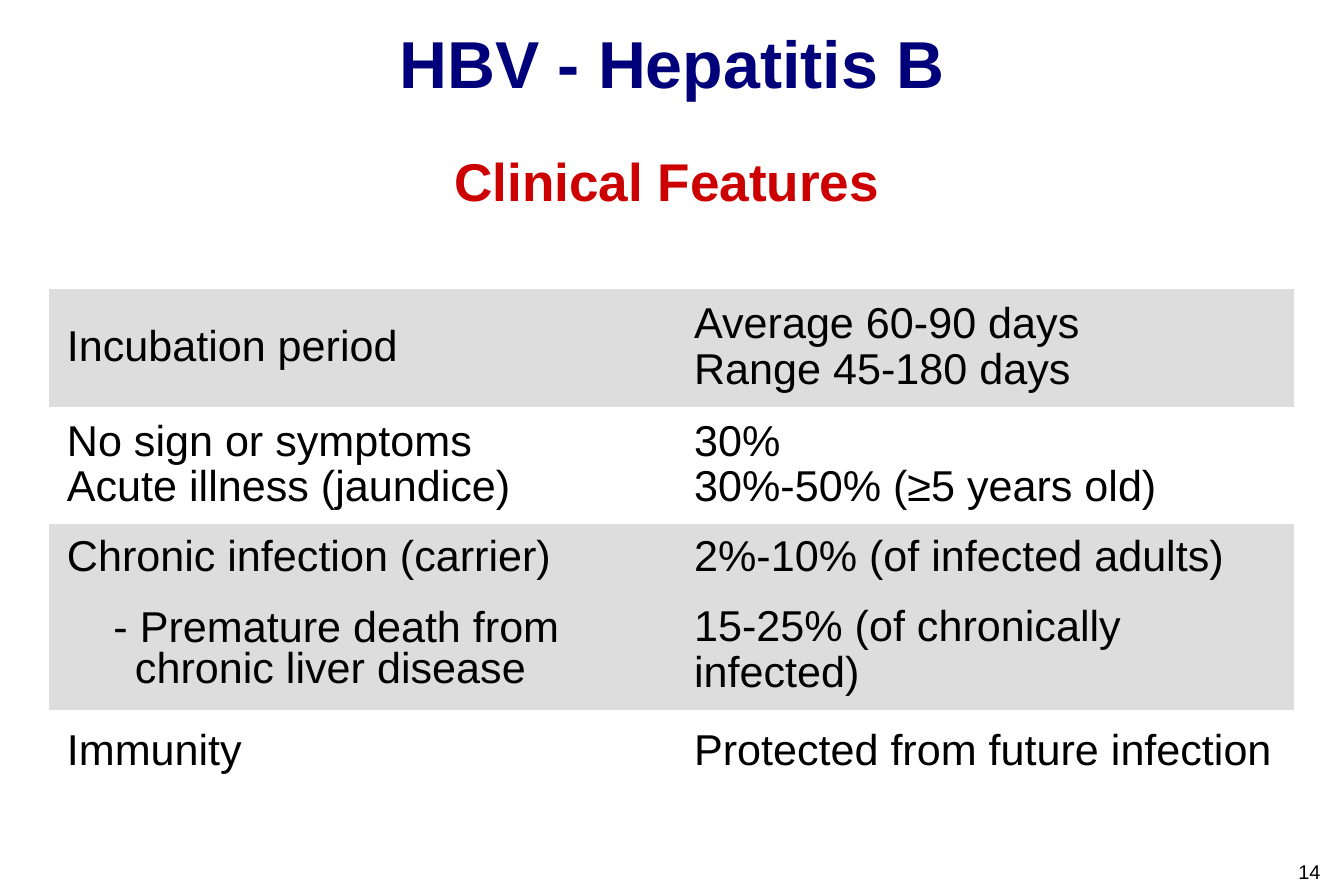
from pptx import Presentation
from pptx.enum.text import MSO_ANCHOR, PP_ALIGN
from pptx.dml.color import RGBColor
from pptx.oxml.ns import qn
from pptx.util import Inches, Pt

CENTER, LEFT = PP_ALIGN.CENTER, PP_ALIGN.LEFT
MIDDLE = MSO_ANCHOR.MIDDLE
TITLE_ONLY = 5
FONT = "Arial"
NO_STYLE = "{2D5ABB26-0587-4C30-8999-92F81FD0307C}"
COLORS = {"title": "00007A", "subtitle": "CC0000", "text": "000000", "band": "DDDDDD"}

COLUMN_WIDTHS = (5.25, 5.17)
ROW_HEIGHTS = (0.92, 0.93, 0.54, 0.93, 0.71)
FEATURES = [
    ("Incubation period", "Average 60-90 days\vRange 45-180 days"),
    ("No sign or symptoms\nAcute illness (jaundice)", "30%\n30%-50% (≥5 years old)"),
    ("Chronic infection (carrier)", "2%-10% (of infected adults)"),
    ("- Premature death from chronic liver disease", "15-25% (of chronically infected)"),
    ("Immunity", "Protected from future infection"),
]
BANDED_ROWS = (0, 2, 3)
SUB_ITEM_ROW = 3


def write(frame, text, size, color="text", bold=False, align=LEFT, spacing=0.9, hang=None):
    """Fill a text frame, one paragraph a line; hang is (left margin, first-line indent)."""
    frame.word_wrap = True
    for number, line in enumerate(text.split("\n")):
        paragraph = frame.paragraphs[0] if number == 0 else frame.add_paragraph()
        paragraph.text = line
        paragraph.alignment = align
        paragraph.line_spacing = spacing
        if hang:
            properties = paragraph._p.get_or_add_pPr()
            properties.set("marL", str(Inches(hang[0])))
            properties.set("indent", str(Inches(hang[1])))
        for run in paragraph.runs:
            run.font.name = FONT
            run.font.size = Pt(size)
            run.font.bold = bold
            run.font.color.rgb = RGBColor.from_string(COLORS[color])


def set_margins(holder, horizontal, vertical):
    holder.margin_left = holder.margin_right = Inches(horizontal)
    holder.margin_top = holder.margin_bottom = Inches(vertical)


def add_title(slide, text):
    title = slide.shapes.title
    title.left, title.top = Inches(0), Inches(0)
    title.width, title.height = Inches(11.25), Inches(1.04)
    set_margins(title.text_frame, 0, 0)
    title.text_frame.vertical_anchor = MIDDLE
    write(title.text_frame, text, 40, "title", bold=True, align=CENTER, spacing=1.0)


def add_label(slide, text, left, top, width, height, size, **formatting):
    box = slide.shapes.add_textbox(Inches(left), Inches(top), Inches(width), Inches(height))
    set_margins(box.text_frame, 0.05, 0.05)
    write(box.text_frame, text, size, align=CENTER, **formatting)


def add_features_table(slide):
    table = slide.shapes.add_table(
        len(FEATURES), len(COLUMN_WIDTHS), Inches(0.41), Inches(2.42),
        Inches(sum(COLUMN_WIDTHS)), Inches(sum(ROW_HEIGHTS))).table
    table.first_row = table.horz_banding = False
    table._tbl.tblPr.find(qn("a:tableStyleId")).text = NO_STYLE
    for column, width in zip(table.columns, COLUMN_WIDTHS):
        column.width = Inches(width)
    for row, height in zip(table.rows, ROW_HEIGHTS):
        row.height = Inches(height)
    for row, entries in enumerate(FEATURES):
        for column, text in enumerate(entries):
            cell = table.cell(row, column)
            set_margins(cell, 0.15, 0.08)
            cell.vertical_anchor = MIDDLE
            if row in BANDED_ROWS:
                cell.fill.solid()
                cell.fill.fore_color.rgb = RGBColor.from_string(COLORS["band"])
            else:
                cell.fill.background()
            is_sub_item = row == SUB_ITEM_ROW and column == 0
            write(cell.text_frame, text, 26,
                  spacing=0.85 if is_sub_item else 0.95,
                  hang=(0.57, -0.18) if is_sub_item else None)


def main():
    deck = Presentation()
    deck.slide_width, deck.slide_height = Inches(11.25), Inches(7.5)
    slide = deck.slides.add_slide(deck.slide_layouts[TITLE_ONLY])
    add_label(slide, "14", 10.75, 7.17, 0.42, 0.28, 12)
    add_title(slide, "HBV - Hepatitis B")
    add_features_table(slide)
    add_label(slide, "Clinical Features", 3.25, 1.25, 4.67, 0.58, 32,
              color="subtitle", bold=True)
    deck.save("out.pptx")


if __name__ == "__main__":
    main()
